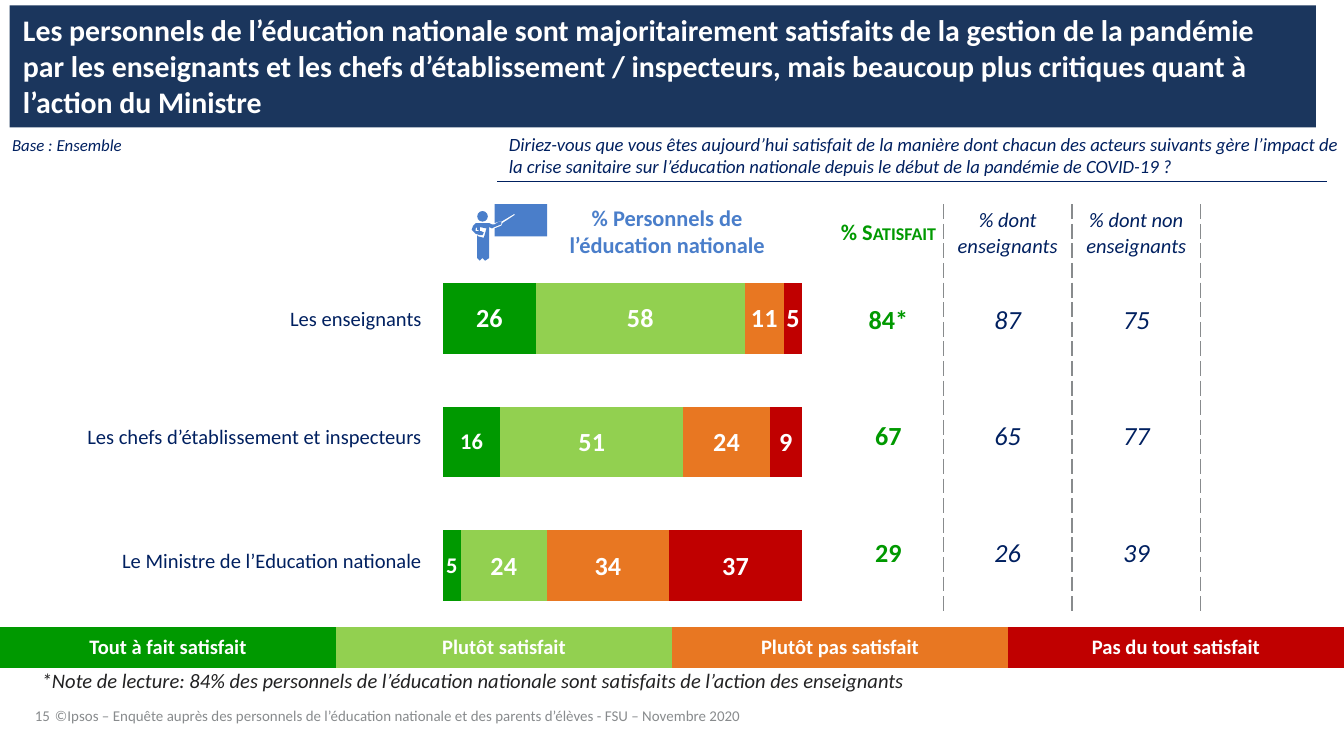
from lxml import etree
from pptx import Presentation
from pptx.chart.data import CategoryChartData
from pptx.dml.color import RGBColor
from pptx.enum.chart import XL_CHART_TYPE as ChartType
from pptx.enum.shapes import MSO_CONNECTOR as Connector, MSO_SHAPE as Shape
from pptx.enum.text import MSO_ANCHOR as Anchor, MSO_AUTO_SIZE as AutoSize, PP_ALIGN as Align
from pptx.oxml import parse_xml
from pptx.oxml.ns import nsdecls, qn
from pptx.util import Cm, Pt

COLORS = {
    "navy": "1B365D", "ink": "002060", "white": "FFFFFF", "grey": "888B8D",
    "black": "222223", "blue": "4A7ECA", "green": "009900", "lime": "92D050",
    "orange": "E87722", "red": "C00000",
}
FONT = "Calibri"
NO_STYLE = "{2D5ABB26-0587-4C30-8999-92F81FD0307C}"

TITLE = ("Les personnels de l’éducation nationale sont majoritairement satisfaits de la gestion "
         "de la pandémie par les enseignants et les chefs d’établissement / inspecteurs, mais "
         "beaucoup plus critiques quant à l’action du Ministre")
QUESTION = ("Diriez-vous que vous êtes aujourd’hui satisfait de la manière dont chacun des acteurs "
            "suivants gère l’impact de la crise sanitaire sur l’éducation nationale depuis le début "
            "de la pandémie de COVID-19 ?")
NOTE = ("*Note de lecture: 84% des personnels de l’éducation nationale sont satisfaits de "
        "l’action des enseignants")
FOOTER = ("©Ipsos – Enquête auprès des personnels de l’éducation nationale et des parents "
          "d’élèves - FSU – Novembre 2020")

ANSWERS = [
    ("Tout à fait satisfait", "green", (26, 16, 5), 12),
    ("Plutôt satisfait", "lime", (58, 51, 24), 14),
    ("Plutôt pas satisfait", "orange", (11, 24, 34), 14),
    ("Pas du tout satisfait", "red", (5, 9, 37), 14),
]
ACTORS = ["Les enseignants", "Les chefs d’établissement et inspecteurs",
          "Le Ministre de l’Education nationale"]
SCORES = [
    [("% ", "Satisfait"), "% dont enseignants", "% dont non enseignants"],
    ["84*", "87", "75"],
    ["67", "65", "77"],
    ["29", "26", "39"],
]

TEXTS = [
    ("15", (0.66, 13.03, 0.86, 0.66), {"size": 8, "color": "grey"},
     {"word_wrap": False, "vertical_anchor": Anchor.BOTTOM}, {"line_spacing": 0.85}, 0),
    (QUESTION, (9.37, 2.31, 16.38, 1.24), {"size": 10, "color": "ink", "italic": True},
     {"vertical_anchor": Anchor.MIDDLE}, {}, None),
    ("Base : Ensemble", (0.23, 2.54, 3, 0.38), {"size": 9, "color": "ink", "italic": True}, {}, {}, 0),
    (FOOTER, (0.79, 13.23, 18.77, 0.51), {"size": 8, "color": "grey"}, {}, {}, None),
    ("% Personnels de\vl’éducation nationale", (9.78, 3.73, 5.66, 1.27),
     {"size": 12, "color": "blue", "bold": True}, {}, {"alignment": Align.CENTER}, None),
    (NOTE, (0.79, 12.62, 19.1, 0.48), {"size": 11, "color": "black", "italic": True}, {}, {}, 0),
]

ICON_UNIT = Cm(2.54) / 100
BOARD = [(372, 165), (373, 165), (383, 159), (383, 160), (374, 166), (373, 168), (368, 170),
         (368, 176), (407, 176), (407, 152), (368, 152), (368, 166), (371, 165)]
TEACHER = [(354, 174), (357, 175), (359, 175), (360, 173), (358, 172), (354, 172), (354, 170),
           (355, 169), (355, 171), (357, 172), (357, 169), (362, 170), (360, 177), (356, 176),
           (355, 175), (355, 192), (357, 194), (359, 192), (359, 179), (359, 192), (361, 194),
           (364, 192), (364, 169), (366, 170), (368, 169), (373, 167), (373, 165), (371, 165),
           (368, 167), (366, 167), (364, 166), (362, 166), (356, 166), (354, 166), (352, 168),
           (351, 171), (352, 172)]


def rgb(name):
    return RGBColor.from_string(COLORS[name])


def assign(target, values):
    for name, value in values.items():
        setattr(target, name, value)


def style(font, size, color, **flags):
    assign(font, {"name": FONT, "size": Pt(size), **flags})
    font.color.rgb = rgb(color)


def paint(shape, color):
    shape.fill.solid()
    shape.fill.fore_color.rgb = rgb(color)


def write(frame, text, look, para_format=None):
    para = frame.paragraphs[0]
    assign(para, para_format or {})
    if isinstance(text, str):
        para.text = text
    else:
        for part in text:
            para.add_run().text = part
        para.runs[-1].font._element.set("cap", "small")
    for span in para.runs:
        style(span.font, **look)


def set_margins(target, left, top, right, bottom):
    assign(target, {"margin_left": Cm(left), "margin_top": Cm(top),
                    "margin_right": Cm(right), "margin_bottom": Cm(bottom)})


def add_grid(page, left, top, widths, heights):
    frame = page.shapes.add_table(len(heights), len(widths), Cm(left), Cm(top),
                                  Cm(sum(widths)), Cm(sum(heights)))
    table = frame.table
    assign(table, {"first_row": False, "horz_banding": False})
    table._tbl.tblPr.find(qn("a:tableStyleId")).text = NO_STYLE
    for column, width in zip(table.columns, widths):
        column.width = Cm(width)
    for row, height in zip(table.rows, heights):
        row.height = Cm(height)
    return table


def fill_cell(cell, text, look, align, color=None):
    cell.vertical_anchor = Anchor.MIDDLE
    if color:
        paint(cell, color)
    else:
        cell.fill.background()
    write(cell.text_frame, text, look, {"alignment": align})


def add_dashed_right(cell):
    border = parse_xml(
        f'<a:lnR {nsdecls("a")} w="12700"><a:solidFill><a:srgbClr val="{COLORS["grey"]}"/>'
        '</a:solidFill><a:prstDash val="sysDash"/></a:lnR>')
    cell._tc.get_or_add_tcPr().insert(0, border)


def add_title(page):
    title = page.shapes.title
    assign(title, {"left": Cm(0.18), "top": Cm(0.1), "width": Cm(24.69), "height": Cm(2.31)})
    paint(title, "navy")
    assign(title.text_frame, {"auto_size": AutoSize.NONE, "word_wrap": True,
                              "vertical_anchor": Anchor.TOP})
    write(title.text_frame, TITLE, {"size": 16, "color": "white", "bold": True},
          {"alignment": Align.LEFT})


def add_chart(page):
    data = CategoryChartData()
    data.categories = ["1", "2", "3"]
    for number, (_, _, values, _) in enumerate(ANSWERS, 1):
        data.add_series(f"Series {number}", values)
    chart = page.shapes.add_chart(ChartType.BAR_STACKED_100, Cm(5.69), Cm(4.85),
                                  Cm(9.47), Cm(7.04), data).chart
    assign(chart, {"has_legend": False, "has_title": False})
    style(chart.font, 10, "black")
    assign(chart.category_axis, {"visible": False, "reverse_order": True})
    assign(chart.value_axis, {"visible": False, "maximum_scale": 1, "minimum_scale": 0,
                              "has_major_gridlines": False})
    plot = chart.plots[0]
    assign(plot, {"gap_width": 75, "overlap": 100, "vary_by_categories": False})
    for series, (_, color, _, size) in zip(plot.series, ANSWERS):
        paint(series.format, color)
        series.data_labels.show_value = True
        style(series.data_labels.font, size, "white", bold=True)
    style(plot.series[0].points[0].data_label.font, 14, "white", bold=True)

    area = chart._chartSpace.chart.plotArea
    for old in area.findall(qn("c:layout")):
        area.remove(old)
    layout = etree.Element(qn("c:layout"))
    manual = etree.SubElement(layout, qn("c:manualLayout"))
    for tag, value in {"layoutTarget": "inner", "xMode": "edge", "yMode": "edge",
                       "x": 0.283, "y": 0, "w": 0.717, "h": 0.997}.items():
        etree.SubElement(manual, qn(f"c:{tag}")).set("val", str(value))
    area.insert(0, layout)


def add_tables(page):
    legend = add_grid(page, 0, 11.86, [6.35] * 4, [0.76])
    for cell, (label, color, _, _) in zip(legend.rows[0].cells, ANSWERS):
        fill_cell(cell, label, {"size": 11, "color": "white", "bold": True}, Align.CENTER, color)

    names = add_grid(page, 1.22, 5.16, [6.78], [1.73, 2.74, 1.93])
    for row, actor in zip(names.rows, ACTORS):
        fill_cell(row.cells[0], actor, {"size": 11, "color": "ink"}, Align.RIGHT)
        set_margins(row.cells[0], 0.03, 0.03, 0.03, 0)

    scores = add_grid(page, 15.75, 3.86, [2.08, 2.43, 2.43], [1.07] + [2.21] * 3)
    for line, texts in enumerate(SCORES):
        for column, text in enumerate(texts):
            cell = scores.cell(line, column)
            if column == 0:
                look = {"size": 14 if line else 12, "color": "green", "bold": True}
            else:
                look = {"size": 14 if line else 11, "color": "ink", "italic": True}
            fill_cell(cell, text, look, Align.CENTER, "white" if column else None)
            set_margins(cell, 0, 0.03, 0, 0)
            add_dashed_right(cell)


def add_icon(page):
    parts = [page.shapes.add_shape(Shape.OVAL, Cm(9.02), Cm(3.99), Cm(0.2), Cm(0.2))]
    for outline in (BOARD, TEACHER):
        builder = page.shapes.build_freeform(*outline[0], scale=ICON_UNIT)
        builder.add_line_segments(outline[1:], close=True)
        parts.append(builder.convert_to_shape())
    for part in parts:
        paint(part, "blue")
        part.line.fill.background()
        part.shadow.inherit = False


def add_texts(page):
    for text, place, look, frame_format, para_format, margin in TEXTS:
        box = page.shapes.add_textbox(*map(Cm, place))
        assign(box.text_frame, {"word_wrap": True, **frame_format})
        if margin is not None:
            set_margins(box.text_frame, *[margin] * 4)
        write(box.text_frame, text, look, para_format)


def add_rule(page):
    rule = page.shapes.add_connector(Connector.STRAIGHT, Cm(9.4), Cm(3.43), Cm(25.07), Cm(3.43))
    rule.line.width = Pt(0.5)
    rule.line.color.rgb = rgb("ink")
    etree.SubElement(rule._element.spPr, qn("a:effectLst"))


def main():
    deck = Presentation()
    assign(deck, {"slide_width": Cm(25.4), "slide_height": Cm(14.29)})
    page = deck.slides.add_slide(deck.slide_layouts[5])
    for add_part in (add_title, add_chart, add_rule, add_tables, add_icon, add_texts):
        add_part(page)
    deck.save("out.pptx")


if __name__ == "__main__":
    main()
